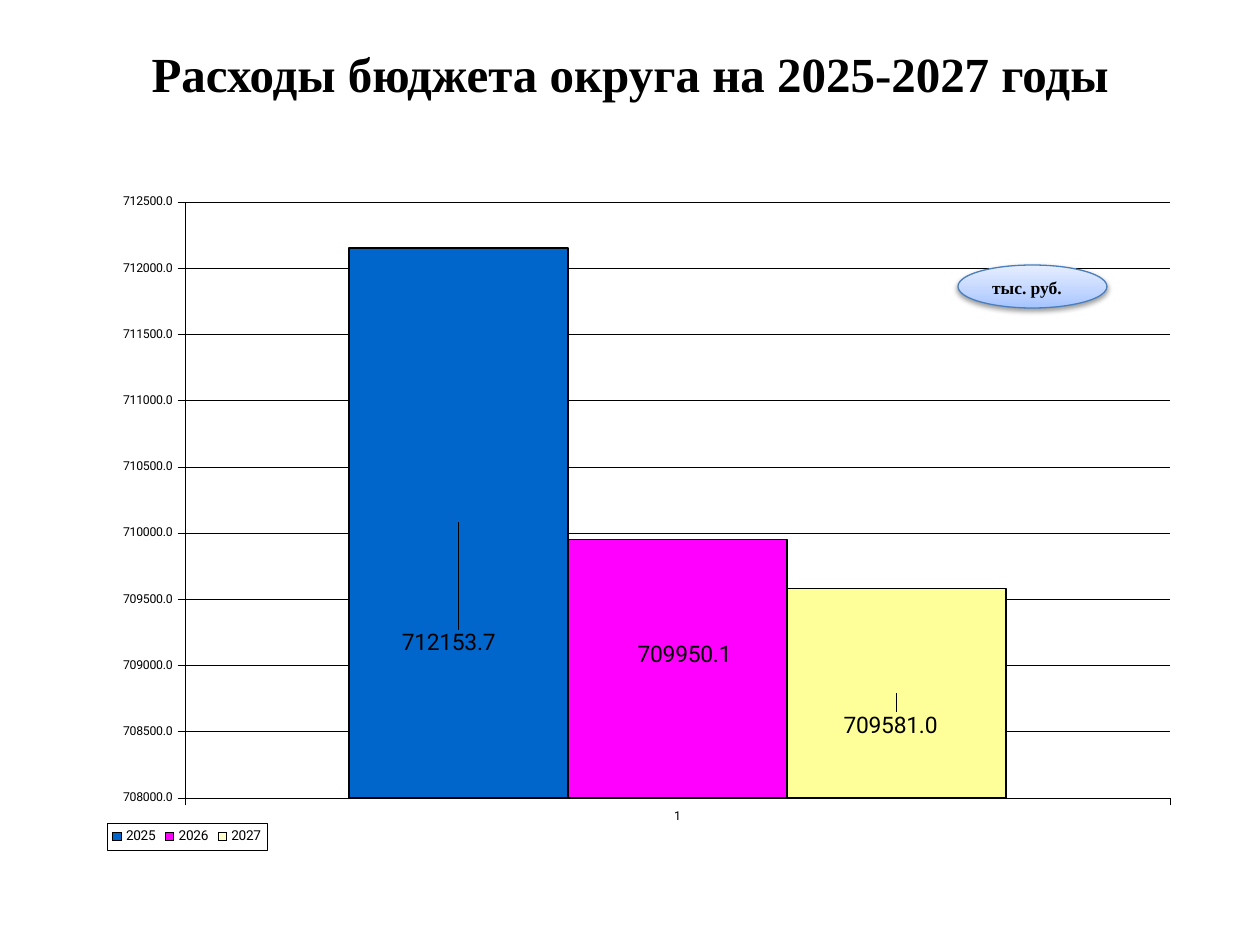
from copy import deepcopy

from pptx import Presentation
from pptx.chart.data import CategoryChartData
from pptx.dml.color import RGBColor
from pptx.enum.chart import XL_CHART_TYPE, XL_LABEL_POSITION, XL_LEGEND_POSITION, XL_TICK_MARK
from pptx.enum.shapes import MSO_SHAPE
from pptx.enum.text import MSO_ANCHOR, PP_ALIGN
from pptx.oxml import parse_xml
from pptx.oxml.ns import nsdecls, qn
from pptx.util import Emu, Pt

COLUMNS = XL_CHART_TYPE.COLUMN_CLUSTERED
CENTER_LABEL = XL_LABEL_POSITION.CENTER
LEGEND_BOTTOM = XL_LEGEND_POSITION.BOTTOM
TICK_OUT = XL_TICK_MARK.OUTSIDE
TICK_NONE = XL_TICK_MARK.NONE
ELLIPSE = MSO_SHAPE.OVAL
MIDDLE, TOP = MSO_ANCHOR.MIDDLE, MSO_ANCHOR.TOP
CENTER, LEFT = PP_ALIGN.CENTER, PP_ALIGN.LEFT

PX = 914400 / 126
SERIF, SANS = "Times New Roman", "Roboto"
COLORS = {
    "black": "000000", "white": "FFFFFF", "mint": "CCFFCC",
    "blue": "0066CC", "magenta": "FF00FF", "cream": "FFFFCC", "yellow": "FFFF99",
    "badge_line": "4B7EBC", "badge_low": "A4C4FF", "badge_mid": "BFD4FF", "badge_high": "E6EEFF",
}
CHART_WIDTH, CHART_HEIGHT = 1090, 689


def style_font(font, name, size, bold=False):
    font.name, font.size, font.bold = name, Pt(size), bold
    font.color.rgb = RGBColor.from_string(COLORS["black"])


def chart_layout(x, y, width=0, height=0, target=""):
    """Manual layout in px of the chart; without a size, an offset from the default place."""
    parts = f'<c:layoutTarget val="{target}"/>' if target else ""
    if width:
        parts += '<c:xMode val="edge"/><c:yMode val="edge"/>'
    shares = {"x": x / CHART_WIDTH, "y": y / CHART_HEIGHT}
    if width:
        shares.update(w=width / CHART_WIDTH, h=height / CHART_HEIGHT)
    parts += "".join(f'<c:{key} val="{share:.4f}"/>' for key, share in shares.items())
    return parse_xml(f'<c:layout {nsdecls("c")}><c:manualLayout>{parts}</c:manualLayout></c:layout>')


prs = Presentation()
prs.slide_width, prs.slide_height = Emu(round(1260 * PX)), Emu(round(945 * PX))
slide = prs.slides.add_slide(prs.slide_layouts[5])

# Title
title = slide.shapes.title
title.left, title.top, title.width, title.height = [Emu(round(n * PX)) for n in (63, 38, 1134, 69)]
title.text_frame.vertical_anchor = MIDDLE
heading = title.text_frame.paragraphs[0]
heading.alignment = CENTER
heading_run = heading.add_run()
heading_run.text = "Расходы бюджета округа на 2025-2027 годы"
style_font(heading_run.font, SERIF, 28, True)

# Spending by year: value, series colour, column colour, label offset in px, label fill
years = {
    "2025": (712153.7, "blue", "blue", (-10, 120), "white"),
    "2026": (709950.1, "magenta", "magenta", (7, -14), "white"),
    "2027": (709581.0, "cream", "yellow", (-6, 32), "mint"),
}
spending = CategoryChartData(number_format="0.0")
spending.categories = ["1"]
for year, details in years.items():
    spending.add_series(year, [details[0]])
chart_box = [Emu(round(n * PX)) for n in (101, 181, CHART_WIDTH, CHART_HEIGHT)]
chart = slide.shapes.add_chart(COLUMNS, *chart_box, spending).chart
chart.has_title = False
style_font(chart.font, SANS, 7)

plot = chart.plots[0]
plot.gap_width, plot.overlap = 150, 0
plot.vary_by_categories = False
for series, details in zip(plot.series, years.values()):
    _, series_color, column_color, offset, label_fill = details
    column = series.points[0]
    for part, color in ((series, series_color), (column, column_color)):
        part.format.fill.solid()
        part.format.fill.fore_color.rgb = RGBColor.from_string(COLORS[color])
        part.format.line.color.rgb = RGBColor.from_string(COLORS["black"])
        part.format.line.width = Pt(0.85)
    label = column.data_label
    style_font(label.font, SANS, 13)
    label.position = CENTER_LABEL
    label_xml = series._element.find(".//" + qn("c:dLbl"))
    label_xml.insert(1, chart_layout(*offset))
    label_xml.insert(2, parse_xml(
        f'<c:spPr {nsdecls("c", "a")}><a:solidFill><a:srgbClr val="{COLORS[label_fill]}"/>'
        '</a:solidFill><a:ln><a:noFill/></a:ln></c:spPr>'))

# Axes
amounts, categories = chart.value_axis, chart.category_axis
amounts.minimum_scale, amounts.maximum_scale, amounts.major_unit = 708000, 712500, 500
amounts.has_major_gridlines = True
amounts.tick_labels.number_format = "0.0"
amounts.tick_labels.number_format_is_linked = False
for axis in (amounts, categories):
    axis.major_tick_mark, axis.minor_tick_mark = TICK_OUT, TICK_NONE
    style_font(axis.tick_labels.font, SANS, 7)
for ruled in (amounts, categories, amounts.major_gridlines):
    ruled.format.line.color.rgb = RGBColor.from_string(COLORS["black"])
    ruled.format.line.width = Pt(0.21)

plot_area = chart._chartSpace.chart.plotArea
for automatic in plot_area.findall(qn("c:layout")):
    plot_area.remove(automatic)
plot_area.insert(0, chart_layout(84, 21, 985, 596, "inner"))

# Legend
chart.has_legend = True
legend = chart.legend
legend.position = LEGEND_BOTTOM
legend.include_in_layout = False
style_font(legend.font, SANS, 7.8)
legend_xml = legend._element
legend_xml.find(qn("c:legendPos")).addnext(chart_layout(6, 642, 160, 27))
for automatic in legend_xml.findall(qn("c:layout"))[1:]:
    legend_xml.remove(automatic)
legend_xml.find(qn("c:overlay")).addnext(parse_xml(
    f'<c:spPr {nsdecls("c", "a")}><a:solidFill><a:srgbClr val="{COLORS["white"]}"/></a:solidFill>'
    f'<a:ln w="2667"><a:solidFill><a:srgbClr val="{COLORS["black"]}"/></a:solidFill></a:ln></c:spPr>'))

# Unit badge
badge = slide.shapes.add_shape(ELLIPSE, *[Emu(round(n * PX)) for n in (958, 265, 149, 43)])
badge.fill.gradient()
badge.fill.gradient_angle = 90
first_stop = badge.fill._xPr.find(".//" + qn("a:gs"))
first_stop.addnext(deepcopy(first_stop))
shades = ((0, "badge_low"), (0.35, "badge_mid"), (1, "badge_high"))
for stop, (position, shade) in zip(badge.fill.gradient_stops, shades):
    stop.position = position
    stop.color.rgb = RGBColor.from_string(COLORS[shade])
badge.line.color.rgb = RGBColor.from_string(COLORS["badge_line"])
badge.line.width = Pt(0.75)
badge.shadow.inherit = False
badge._element.spPr.find(qn("a:effectLst")).append(parse_xml(
    f'<a:outerShdw {nsdecls("a")} blurRad="{Pt(3.1)}" dist="{Pt(1.6)}" dir="5400000" rotWithShape="0">'
    f'<a:srgbClr val="{COLORS["black"]}"><a:alpha val="38000"/></a:srgbClr></a:outerShdw>'))
badge.text_frame.vertical_anchor = TOP
unit = badge.text_frame.paragraphs[0]
unit.alignment = LEFT
unit_run = unit.add_run()
unit_run.text = "тыс. руб."
style_font(unit_run.font, SERIF, 10, True)

prs.save("out.pptx")
